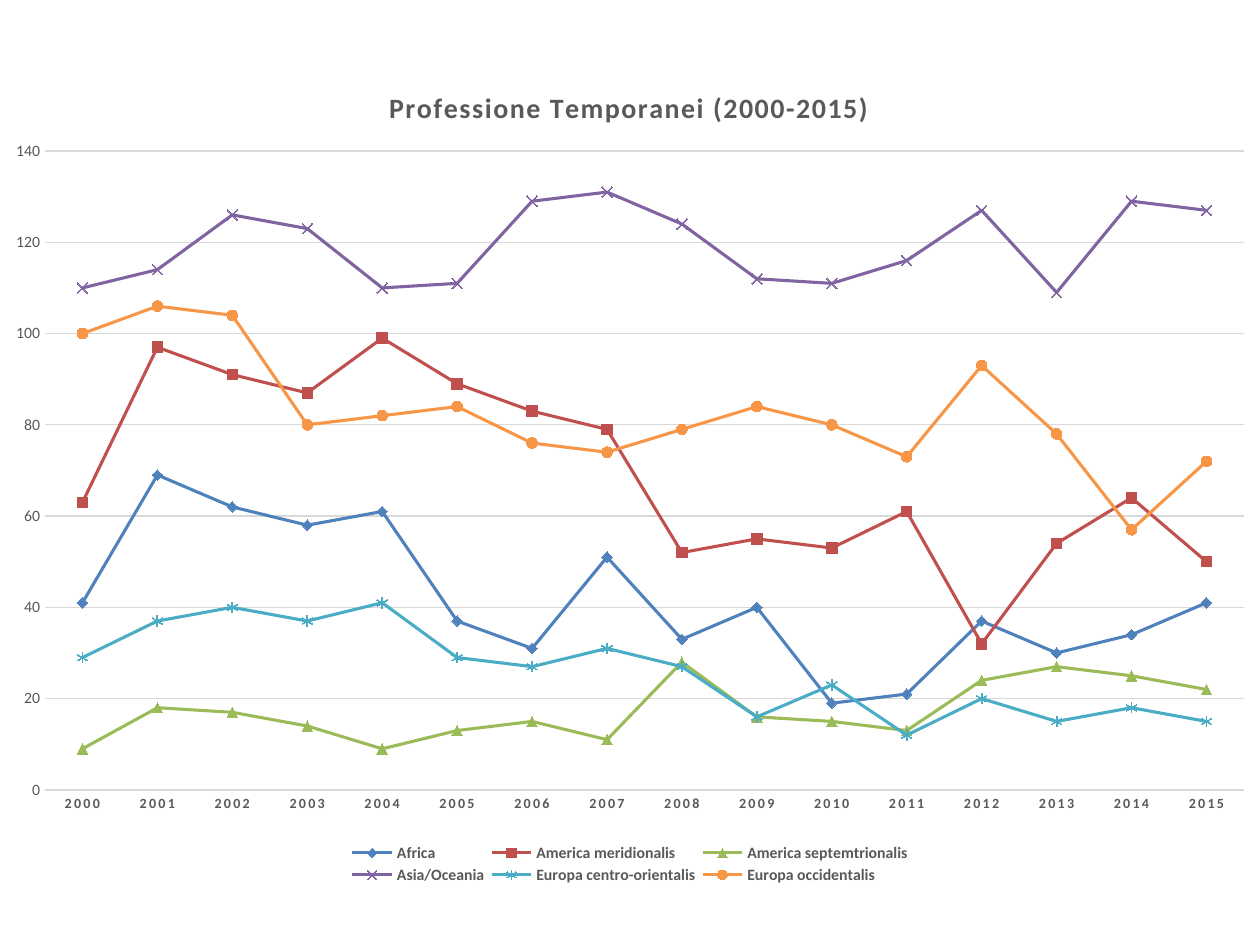
import pptx
import pptx.chart.data
import pptx.dml.color
import pptx.enum.chart
import pptx.oxml
import pptx.oxml.ns
import pptx.util

RGB = pptx.dml.color.RGBColor
MARKER = pptx.enum.chart.XL_MARKER_STYLE

PX = 914400 // 126
SLIDE_SIZE = (1260, 945)
CHART = (-10, 54, 1279, 835)
PLOT = (45, 151, 1199, 639)
LEGEND = (345, 840, 570, 48)
TITLE_CORNER = (384, 84)

FONT = "Calibri"
TEXT = RGB(0x59, 0x59, 0x59)
GRID = RGB(0xD9, 0xD9, 0xD9)
BLUE = RGB(0x4F, 0x81, 0xBD)
RED = RGB(0xC0, 0x50, 0x4D)
GREEN = RGB(0x9B, 0xBB, 0x59)
PURPLE = RGB(0x80, 0x64, 0xA2)
TEAL = RGB(0x4B, 0xAC, 0xC6)
ORANGE = RGB(0xF7, 0x96, 0x46)

TITLE = "Professione Temporanei (2000-2015)"
YEARS = [str(year) for year in range(2000, 2016)]
REGIONS = [
    ("Africa", BLUE, MARKER.DIAMOND,
     [41, 69, 62, 58, 61, 37, 31, 51, 33, 40, 19, 21, 37, 30, 34, 41]),
    ("America meridionalis", RED, MARKER.SQUARE,
     [63, 97, 91, 87, 99, 89, 83, 79, 52, 55, 53, 61, 32, 54, 64, 50]),
    ("America septemtrionalis", GREEN, MARKER.TRIANGLE,
     [9, 18, 17, 14, 9, 13, 15, 11, 28, 16, 15, 13, 24, 27, 25, 22]),
    ("Asia/Oceania", PURPLE, MARKER.X,
     [110, 114, 126, 123, 110, 111, 129, 131, 124, 112, 111, 116, 127, 109, 129, 127]),
    ("Europa centro-orientalis", TEAL, MARKER.STAR,
     [29, 37, 40, 37, 41, 29, 27, 31, 27, 16, 23, 12, 20, 15, 18, 15]),
    ("Europa occidentalis", ORANGE, MARKER.CIRCLE,
     [100, 106, 104, 80, 82, 84, 76, 74, 79, 84, 80, 73, 93, 78, 57, 72]),
]
UNFILLED = (MARKER.X, MARKER.STAR)


def style_font(font, size, bold=False):
    font.name = FONT
    font.size = pptx.util.Pt(size)
    font.bold = bold
    font.color.rgb = TEXT


def style_line(line, color, width):
    line.color.rgb = color
    line.width = pptx.util.Pt(width)


def place(element, area, before, inner=False):
    left, top, width, height = CHART
    parts = [(area[0] - left) / width, (area[1] - top) / height]
    if len(area) == 4:
        parts += [area[2] / width, area[3] / height]
    target = '<c:layoutTarget val="inner"/>' if inner else ""
    modes = '<c:xMode val="edge"/><c:yMode val="edge"/>'
    values = "".join(f'<c:{key} val="{part:.4f}"/>' for key, part in zip("xywh", parts))
    layout = pptx.oxml.parse_xml(
        f"<c:layout {pptx.oxml.ns.nsdecls('c')}><c:manualLayout>"
        f"{target}{modes}{values}</c:manualLayout></c:layout>")
    for old in element.findall(pptx.oxml.ns.qn("c:layout")):
        element.remove(old)
    follower = next(child for child in element
                    if child.tag in [pptx.oxml.ns.qn(name) for name in before])
    follower.addprevious(layout)


def add_title(chart):
    frame = chart.chart_title.text_frame
    span = frame.paragraphs[0].add_run()
    span.text = TITLE
    style_font(span.font, 16, True)
    span.font._element.set("spc", "100")
    chart.chart_title.include_in_layout = False
    place(chart.chart_title._element, TITLE_CORNER, ["c:overlay"])


def style_axes(chart):
    years, counts = chart.category_axis, chart.value_axis
    for axis in (years, counts):
        axis.major_tick_mark = pptx.enum.chart.XL_TICK_MARK.NONE
        axis.minor_tick_mark = pptx.enum.chart.XL_TICK_MARK.NONE
    style_font(years.tick_labels.font, 8, True)
    years.tick_labels.font._element.set("spc", "120")
    style_line(years.format.line, GRID, 0.75)
    style_font(counts.tick_labels.font, 9)
    counts.minimum_scale, counts.maximum_scale, counts.major_unit = 0, 140, 20
    counts.format.line.fill.background()
    style_line(counts.major_gridlines.format.line, GRID, 0.75)


def style_series(chart):
    for series, (name, color, marker, values) in zip(chart.plots[0].series, REGIONS):
        series.smooth = False
        style_line(series.format.line, color, 1.75)
        series.marker.style = marker
        series.marker.size = 6
        style_line(series.marker.format.line, color, 0.75)
        if marker in UNFILLED:
            series.marker.format.fill.background()
        else:
            series.marker.format.fill.solid()
            series.marker.format.fill.fore_color.rgb = color


def main():
    deck = pptx.Presentation()
    deck.slide_width, deck.slide_height = (side * PX for side in SLIDE_SIZE)
    page = deck.slides.add_slide(deck.slide_layouts[6])

    data = pptx.chart.data.CategoryChartData()
    data.categories = YEARS
    for name, color, marker, values in REGIONS:
        data.add_series(name, values)
    chart = page.shapes.add_chart(
        pptx.enum.chart.XL_CHART_TYPE.LINE_MARKERS,
        *(length * PX for length in CHART), data).chart
    chart.font.name = FONT
    chart.font.size = pptx.util.Pt(10)
    chart.plots[0].vary_by_categories = False

    add_title(chart)
    style_axes(chart)
    style_series(chart)
    place(chart.plots[0]._element.getparent(), PLOT, ["c:lineChart"], inner=True)

    chart.has_legend = True
    chart.legend.position = pptx.enum.chart.XL_LEGEND_POSITION.BOTTOM
    chart.legend.include_in_layout = False
    style_font(chart.legend.font, 9, True)
    place(chart.legend._element, LEGEND, ["c:overlay"])

    deck.save("out.pptx")


if __name__ == "__main__":
    main()
